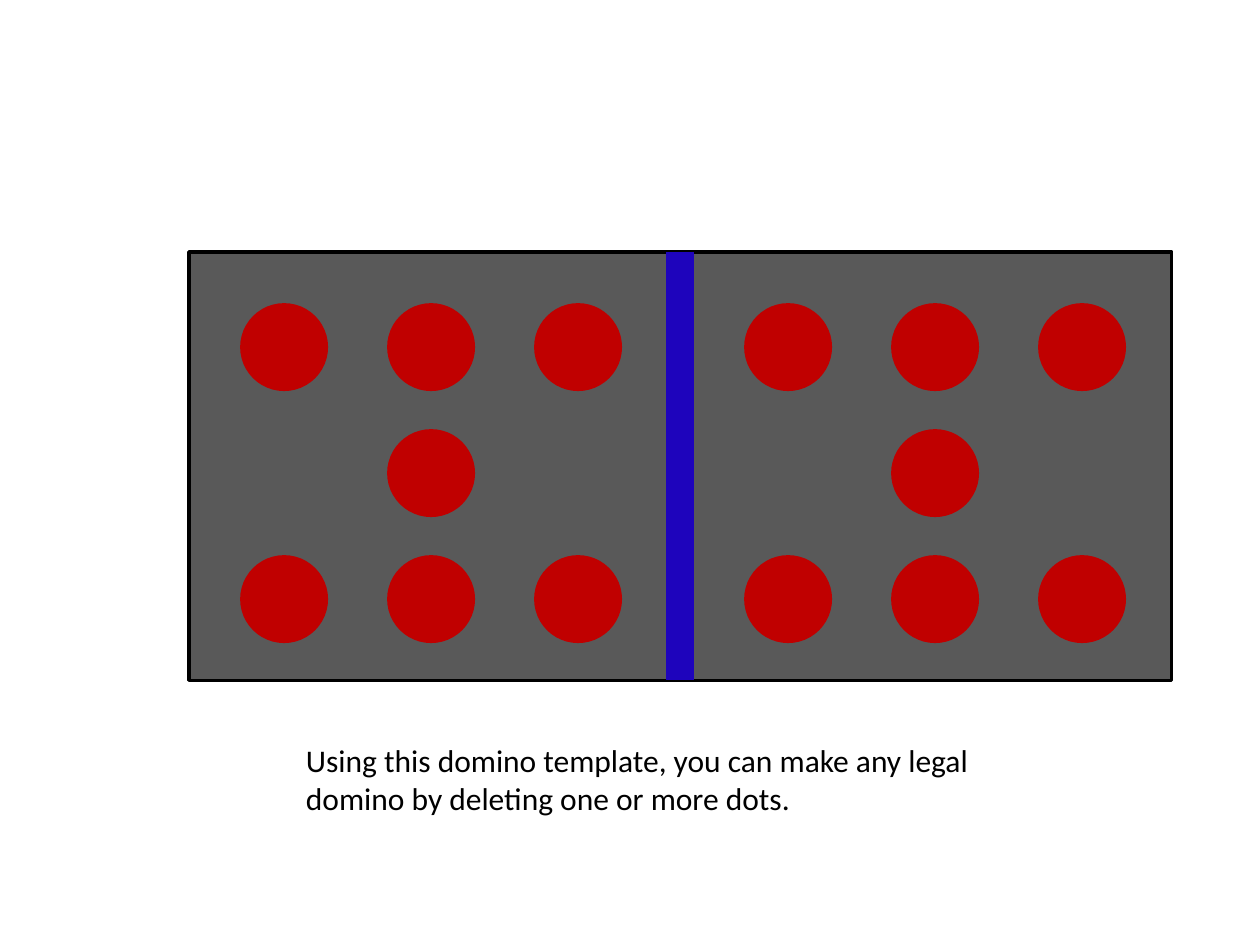
from lxml import etree
from pptx import Presentation
from pptx import util as u
from pptx.dml.color import RGBColor
from pptx.enum import shapes, text
from pptx.oxml.ns import qn

COLORS = {"tile": "595959", "outline": "000000", "divider": "1E04BC",
          "dot": "C00000", "text": "000000"}


def add_filled(page, kind, left, top, width, height, fill, line):
    shape = page.shapes.add_shape(kind, u.Inches(left), u.Inches(top),
                                  u.Inches(width), u.Inches(height))
    shape.shadow.inherit = False
    shape.fill.solid()
    shape.fill.fore_color.rgb = RGBColor.from_string(COLORS[fill])
    shape.line.color.rgb = RGBColor.from_string(COLORS[line])
    shape.line.width = u.Pt(2)
    return shape


def add_text(page, lines, left, top, width, height, size=18, font="Calibri", color="text"):
    box = page.shapes.add_textbox(u.Inches(left), u.Inches(top),
                                  u.Inches(width), u.Inches(height))
    box.text_frame.word_wrap = True
    box.text_frame.auto_size = text.MSO_AUTO_SIZE.SHAPE_TO_FIT_TEXT
    para = box.text_frame.paragraphs[0]
    para.text = lines
    for span in para.runs:
        span.font.size = u.Pt(size)
        span.font.name = font
        span.font.color.rgb = RGBColor.from_string(COLORS[color])


deck = Presentation()
deck.slide_width, deck.slide_height = u.Inches(10), u.Inches(7.5)
page = deck.slides.add_slide(deck.slide_layouts[6])

tile = add_filled(page, shapes.MSO_SHAPE.RECTANGLE, 1.5, 2, 7.8, 3.4, "tile", "outline")

divider = page.shapes.add_connector(shapes.MSO_CONNECTOR.STRAIGHT, u.Inches(5.4), u.Inches(2),
                                    u.Inches(5.4), u.Inches(5.4))
divider.begin_connect(tile, 0)
divider.end_connect(tile, 2)
divider.line.color.rgb = RGBColor.from_string(COLORS["divider"])
divider.line.width = u.Pt(16)
etree.SubElement(divider.element.spPr, qn("a:effectLst"))

# Each half has three dots at the top and bottom and one in the centre.
DOT = 0.67
COLUMN_STEP = 3.5 / 3
for half_left in (1.92, 5.92):
    for row, columns in enumerate([(0, 1, 2), (1,), (0, 1, 2)]):
        for column in columns:
            add_filled(page, shapes.MSO_SHAPE.OVAL, half_left + column * COLUMN_STEP,
                       2.42 + row, DOT, DOT, "dot", "dot")

add_text(page, "Using this domino template, you can make any legal\n"
               "domino by deleting one or more dots.", 2.33, 5.83, 6.17, 0.71)

deck.save("out.pptx")
